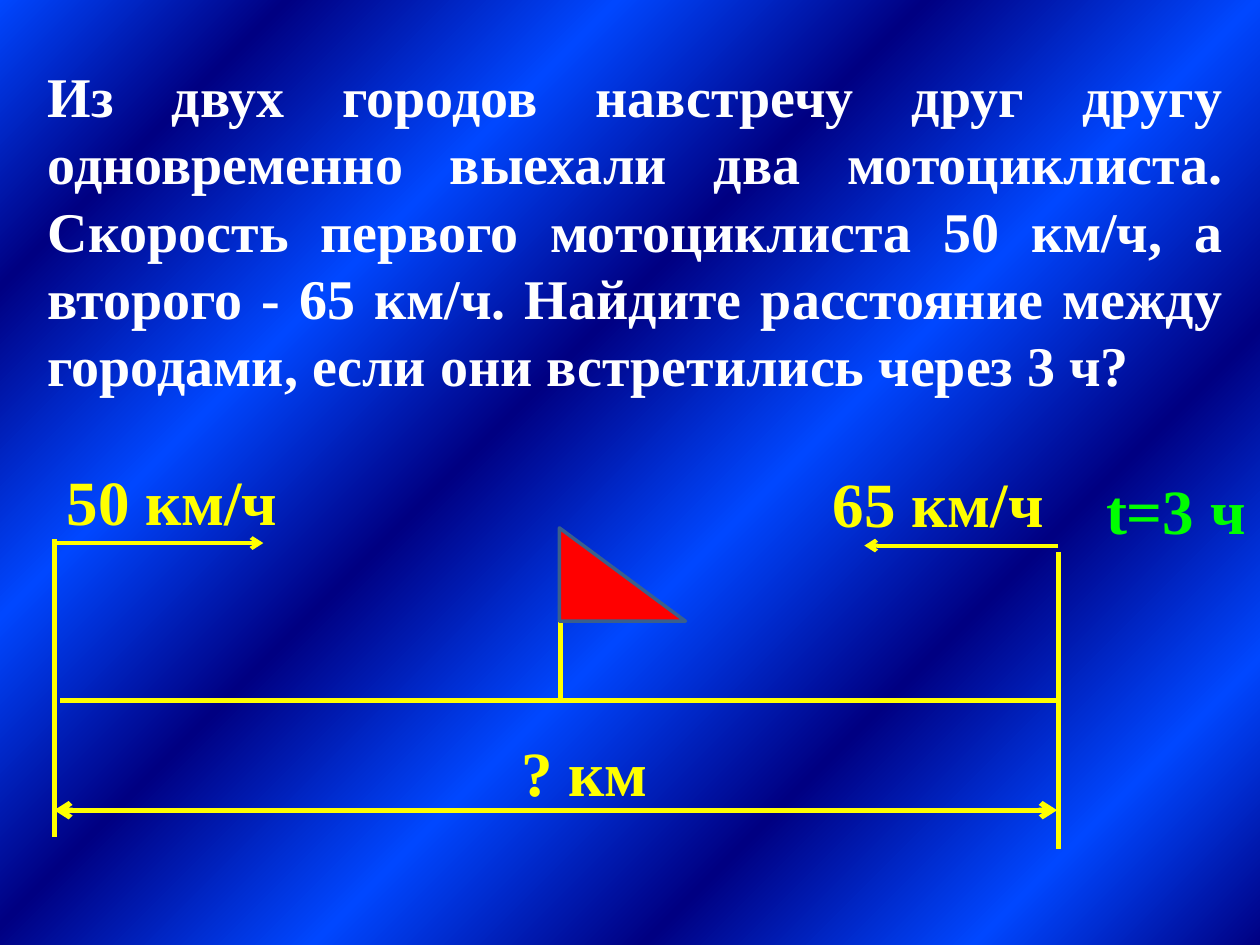
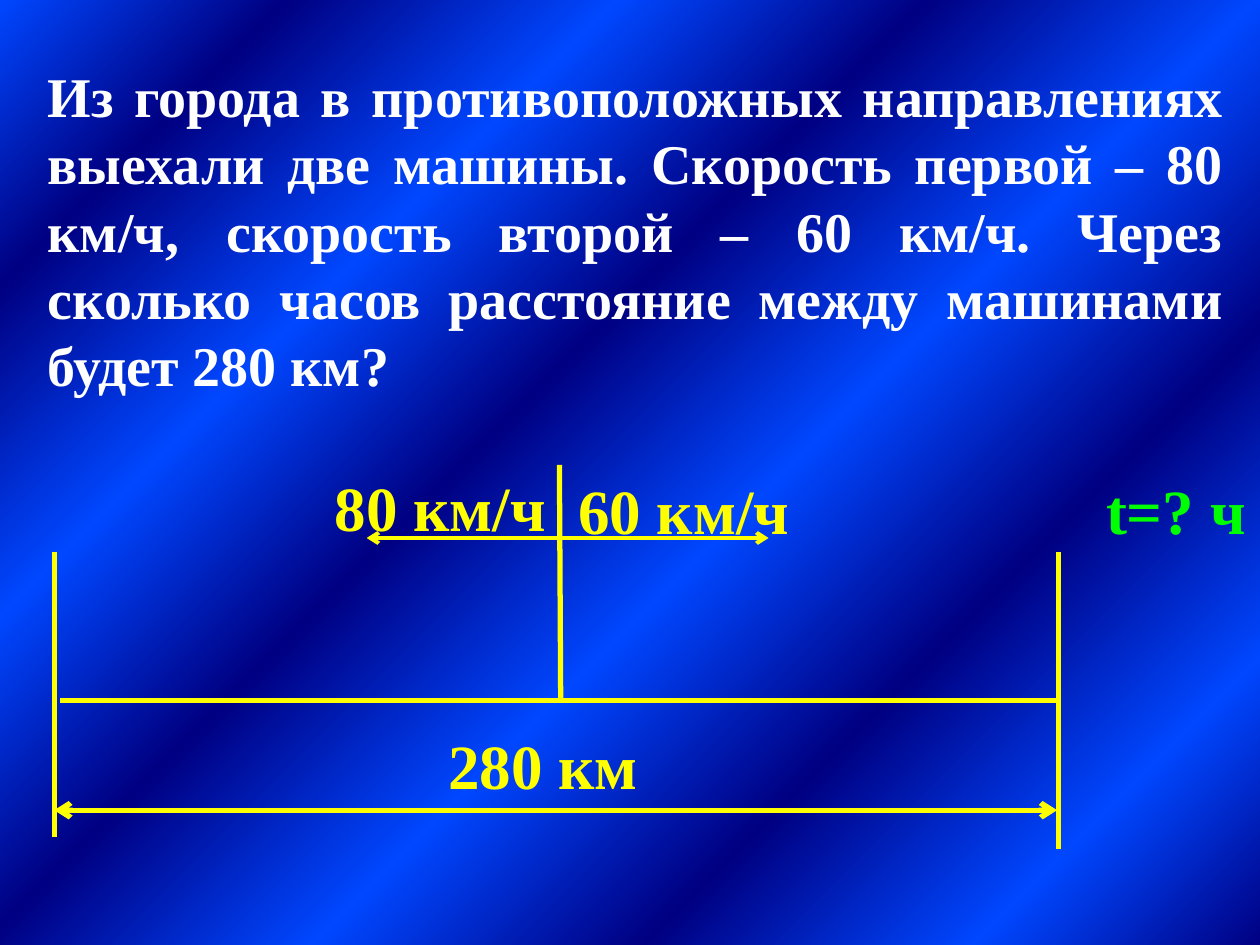
from lxml.etree import SubElement as Sub
from pptx import Presentation as Deck
from pptx.dml.color import RGBColor as Rgb
from pptx.enum.shapes import MSO_CONNECTOR as Link, MSO_SHAPE as Form
from pptx.enum.text import MSO_AUTO_SIZE as Fit, PP_ALIGN as Align
from pptx.oxml.ns import qn
from pptx.util import Pt

SCALE = 9144  # 100 px to the inch
COLORS = {"text": "FFFFFF", "mark": "FFFF00", "time": "00FF00",
          "flag": "FF0000", "edge": "3A5F8C", "dark": "000082", "blue": "0047FF"}
STOPS = (0, 13, 28, 43, 58, 72, 87, 100)
FONT = {"name": "Times New Roman", "bold": True}

# Shared places of the road scheme
LEFT, MID, RIGHT = 43, 445, 840
ROAD, SPAN = 556, 643


def px(*vals):
    return [val * SCALE for val in vals]


def rgb(name):
    return Rgb.from_string(COLORS[name])


def put(obj, form):
    for key, val in form.items():
        setattr(obj, key, val)


class Board:
    """Holds the style and the current slide."""

    def __init__(self):
        self.deck = Deck()
        size = px(1000, 750)
        put(self.deck, {"slide_width": size[0], "slide_height": size[1]})
        self.paint()
        self.slide = None

    def paint(self):
        """Striped backdrop, set once on the master."""
        master = self.deck.slide_master
        master.background.fill.gradient()
        grad = master.element.find(".//" + qn("a:gradFill"))
        for kid in list(grad):
            grad.remove(kid)
        stops = Sub(grad, qn("a:gsLst"))
        for num, pos in enumerate(STOPS):
            stop = Sub(stops, qn("a:gs"), pos=str(pos * 1000))
            tone = COLORS["blue" if num % 2 else "dark"]
            Sub(stop, qn("a:srgbClr"), val=tone)
        way = Sub(grad, qn("a:path"), path="circle")
        Sub(way, qn("a:fillToRect"), l="100000", t="100000")
        Sub(grad, qn("a:tileRect"), r="-100000", b="-100000")

    def page(self):
        self.slide = self.deck.slides.add_slide(self.deck.slide_layouts[6])

    def text(self, words, box, tone="mark", size=36, wrap=False, align=None):
        frame = self.slide.shapes.add_textbox(*px(*box)).text_frame
        put(frame, {"word_wrap": wrap, "auto_size": Fit.SHAPE_TO_FIT_TEXT})
        para = frame.paragraphs[0]
        para.alignment = align
        run = para.add_run()
        run.text = words
        put(run.font, {**FONT, "size": Pt(size)})
        run.font.color.rgb = rgb(tone)

    def line(self, x1, y1, x2, y2, width=3, ends=()):
        link = self.slide.shapes.add_connector(Link.STRAIGHT, *px(x1, y1, x2, y2))
        link.line.width = Pt(width)
        link.line.color.rgb = rgb("mark")
        edge = link.line._get_or_add_ln()
        for end in ends:
            Sub(edge, qn(f"a:{end}End"), type="arrow")
        Sub(link._element.spPr, qn("a:effectLst"))

    def speed(self, start, end, y):
        self.line(start, y, end, y, 2.25, ("tail",))

    def flag(self, box):
        flag = self.slide.shapes.add_shape(Form.RIGHT_TRIANGLE, *px(*box))
        flag.shadow.inherit = False
        flag.fill.solid()
        flag.fill.fore_color.rgb = rgb("flag")
        flag.line.color.rgb = rgb("edge")
        flag.line.width = Pt(2)

    def task(self, words, time, top):
        """Task text, time and the road with its two end marks."""
        self.page()
        self.text(words, (28, 44, 953, 279), "text", 32, True, Align.JUSTIFY)
        self.line(LEFT, SPAN, RIGHT - 1, SPAN, ends=("head", "tail"))
        self.line(LEFT, top, LEFT, 664)
        self.line(RIGHT, 438, RIGHT, 674)
        self.line(LEFT + 5, ROAD, RIGHT, ROAD)
        self.text(time, (868, 369, 132, 71), "time")


def main():
    board = Board()

    # Two riders heading towards each other
    board.task("Из двух городов навстречу друг другу одновременно выехали два "
               "мотоциклиста. Скорость первого мотоциклиста 50 км/ч, а второго "
               "- 65 км/ч. Найдите расстояние между городами, если они "
               "встретились через 3 ч?", "t=3 ч", 428)
    board.speed(LEFT, 209, 431)
    board.speed(RIGHT, 686, 433)
    board.line(MID, 430, MID, ROAD)
    board.flag((444, 419, 100, 74))
    board.text("50 км/ч", (LEFT, 362, 189, 71))
    board.text("65 км/ч", (651, 364, 189, 71))
    board.text("? км", (404, 577, 122, 71))

    # Two cars driving apart
    board.task("Из города в противоположных направлениях выехали две машины. "
               "Скорость первой – 80 км/ч, скорость второй – 60 км/ч. Через "
               "сколько часов расстояние между машинами будет 280 км?",
               "t=? ч", 438)
    board.speed(MID, 610, 427)
    board.speed(MID, 291, 427)
    board.line(MID - 1, 369, MID, ROAD)
    board.text("60 км/ч", (449, 369, 189, 71))
    board.text("80 км/ч", (256, 367, 189, 71))
    board.text("280 км", (346, 572, 172, 71))

    board.deck.save("out.pptx")


if __name__ == "__main__":
    main()
